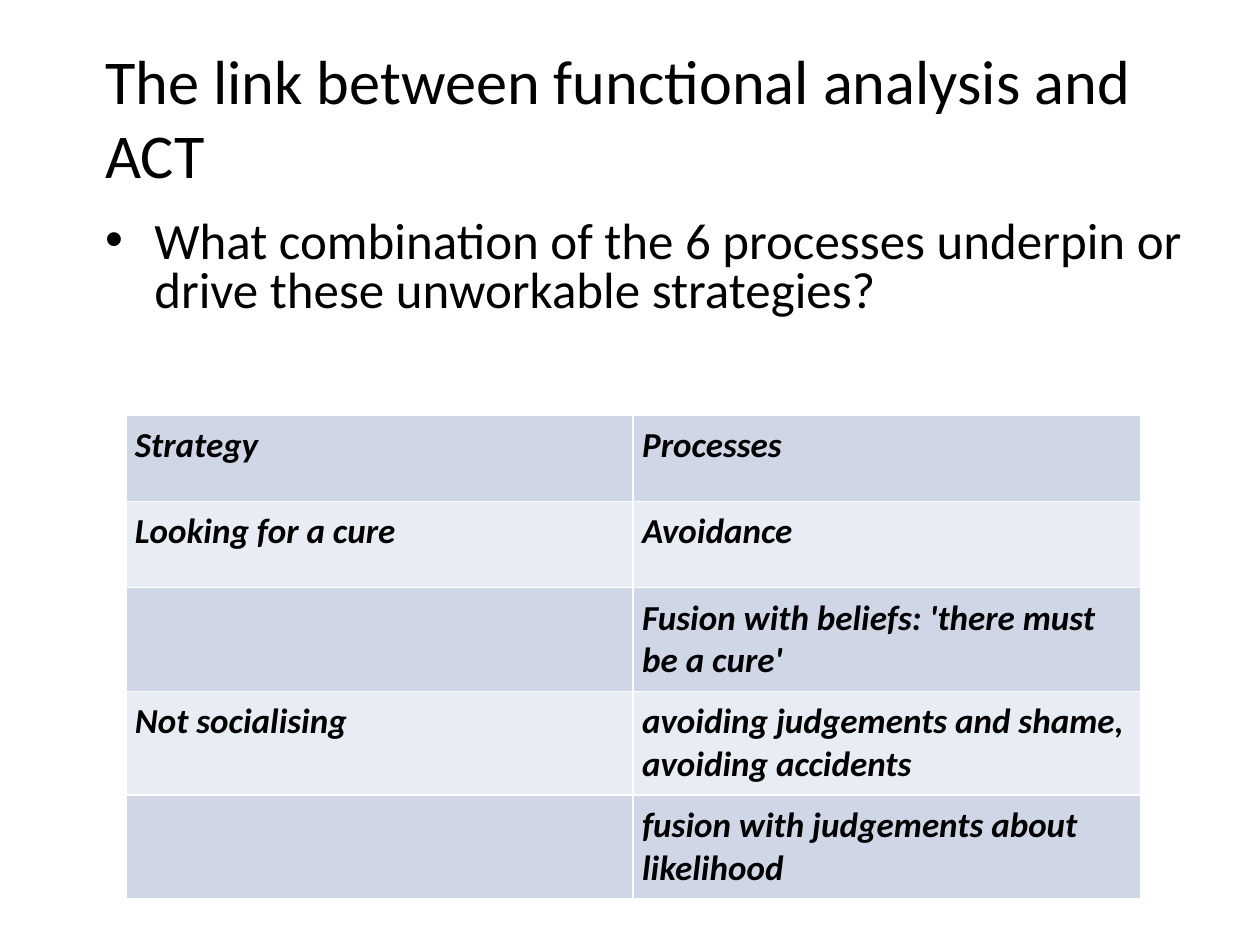
from pptx import Presentation
from pptx import util as u
from pptx.dml.color import RGBColor
from pptx.enum import text
from pptx.oxml import parse_xml
from pptx.oxml.ns import nsdecls

COLOURS = {"text": "000000", "border": "FFFFFF", "dark": "CFD7E7", "light": "E8ECF4"}
ROWS = [
    ("Strategy", "Processes"),
    ("Looking for a cure", "Avoidance"),
    ("", "Fusion with beliefs: 'there must be a cure'"),
    ("Not socialising", "avoiding judgements and shame, avoiding accidents"),
    ("", "fusion with judgements about likelihood"),
]


def set_values(target, values):
    for name, value in values.items():
        setattr(target, name, value)


class SlideBuilder:
    font_name = "Calibri"
    cell_margin = u.Cm(0.18)

    def __init__(self, slide):
        self.slide = slide

    def format_paragraph(self, paragraph, size, **values):
        set_values(paragraph, {"space_before": u.Pt(0), **values})
        set_values(paragraph.font, {"name": self.font_name, "size": u.Pt(size)})
        paragraph.font.color.rgb = RGBColor.from_string(COLOURS["text"])

    def place(self, shape, wording, left, top, width, height, anchor):
        set_values(shape, {"left": u.Cm(left), "top": u.Cm(top),
                           "width": u.Cm(width), "height": u.Cm(height)})
        frame = shape.text_frame
        set_values(frame, {"margin_left": 0, "margin_right": 0, "margin_top": 0,
                           "margin_bottom": 0, "word_wrap": True,
                           "auto_size": text.MSO_AUTO_SIZE.NONE,
                           "vertical_anchor": anchor})
        frame.text = wording
        return frame.paragraphs[0]

    def add_title(self, wording, *box):
        paragraph = self.place(self.slide.shapes.title, wording, *box, text.MSO_ANCHOR.MIDDLE)
        self.format_paragraph(paragraph, 35.6, alignment=text.PP_ALIGN.LEFT)

    def add_bullet(self, wording, *box):
        paragraph = self.place(self.slide.placeholders[1], wording, *box, text.MSO_ANCHOR.TOP)
        properties = paragraph._p.get_or_add_pPr()
        indent = u.Cm(0.99)
        properties.set("marL", str(indent))
        properties.set("indent", str(-indent))
        properties.append(parse_xml(
            f'<a:buClr {nsdecls("a")}><a:srgbClr val="{COLOURS["text"]}"/></a:buClr>'))
        properties.append(parse_xml(f'<a:buChar {nsdecls("a")} char="•"/>'))
        self.format_paragraph(paragraph, 29.1, line_spacing=0.8)

    def format_cell(self, cell, wording, colour):
        set_values(cell, {f"margin_{side}": self.cell_margin
                          for side in ("left", "right", "top", "bottom")})
        cell.text = wording
        paragraph = cell.text_frame.paragraphs[0]
        self.format_paragraph(paragraph, 20)
        set_values(paragraph.font, {"bold": True, "italic": True})
        properties = cell._tc.get_or_add_tcPr()
        for edge in ("lnL", "lnR", "lnT", "lnB"):
            properties.append(parse_xml(
                f'<a:{edge} {nsdecls("a")} w="{u.Pt(1)}"><a:solidFill>'
                f'<a:srgbClr val="{COLOURS["border"]}"/></a:solidFill></a:{edge}>'))
        cell.fill.solid()
        cell.fill.fore_color.rgb = RGBColor.from_string(COLOURS[colour])

    def add_table(self, rows, left, top, width, row_height):
        table = self.slide.shapes.add_table(
            len(rows), len(rows[0]), u.Cm(left), u.Cm(top),
            u.Cm(width), u.Cm(row_height * len(rows))).table
        for row_index, row in enumerate(rows):
            colour = "light" if row_index % 2 else "dark"
            for column_index, wording in enumerate(row):
                self.format_cell(table.cell(row_index, column_index), wording, colour)


def main():
    presentation = Presentation()
    set_values(presentation, {"slide_width": u.Cm(25.4), "slide_height": u.Cm(19.05)})
    builder = SlideBuilder(presentation.slides.add_slide(presentation.slide_layouts[1]))
    builder.add_title("The link between functional analysis and ACT", 2.12, 0.76, 22.43, 3.18)
    builder.add_bullet("What combination of the 6 processes underpin or drive these "
                       "unworkable strategies?", 2.12, 4.45, 22.43, 3.4)
    builder.add_table(ROWS, 2.54, 8.37, 20.45, 1.74)
    presentation.save("out.pptx")


if __name__ == "__main__":
    main()
